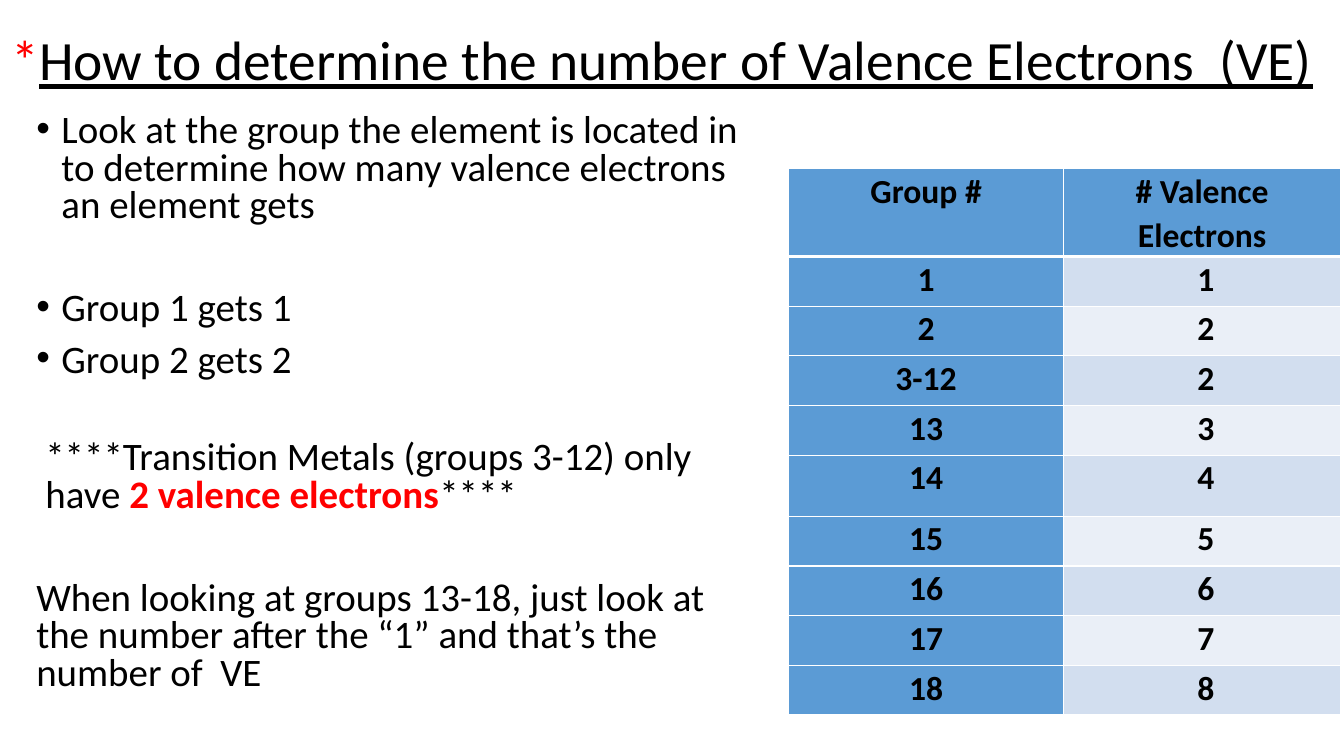
from lxml.etree import SubElement
from pptx import Presentation
from pptx.dml.color import RGBColor
from pptx.enum.text import MSO_ANCHOR as Anchor, MSO_AUTO_SIZE as AutoSize, PP_ALIGN as Align
from pptx.oxml.ns import qn
from pptx.util import Pt

FONT = "Calibri"
COLORS = {"text": "000000", "accent": "FF0000", "blue": "5B9BD5",
          "band_dark": "D2DEEF", "band_light": "EAEFF7", "rule": "FFFFFF"}
TITLE_SIZE, BODY_SIZE, TABLE_SIZE = 39.6, 27.8, 24

# Group label and its number of valence electrons
GROUPS = [("1", 1), ("2", 2), ("3-12", 2), ("13", 3), ("14", 4),
          ("15", 5), ("16", 6), ("17", 7), ("18", 8)]
HEADER_HEIGHT, ROW_HEIGHT, TALL_ROW_HEIGHT = 62, 35.5, 43.6


def rgb(name):
    return RGBColor.from_string(COLORS[name])


def add_run(p, text, size, color="text", bold=False, underline=False):
    r = p.add_run()
    r.text = text
    font = r.font
    font.name, font.size = FONT, Pt(size)
    font.bold, font.underline = bold, underline
    font.color.rgb = rgb(color)


def place(sp, left, top, width, height, anchor):
    sp.left, sp.top, sp.width, sp.height = Pt(left), Pt(top), Pt(width), Pt(height)
    tf = sp.text_frame
    tf.word_wrap = True
    tf.auto_size = AutoSize.NONE
    tf.vertical_anchor = anchor
    return tf


def format_item(p, before, indent=0, bullet=False, level=0):
    p.level = level
    p.alignment = Align.LEFT
    p.line_spacing = 0.8
    p.space_before = Pt(before)
    pPr = p._p.get_or_add_pPr()
    pPr.set("marL", str(Pt(indent)))
    pPr.set("indent", str(Pt(-indent if bullet else 0)))
    if bullet:
        SubElement(pPr, qn("a:buFont"), typeface="Arial")
        SubElement(pPr, qn("a:buChar"), char="•")
    else:
        SubElement(pPr, qn("a:buNone"))


def add_title(s):
    tf = place(s.shapes.title, 1, 0, 960, 90, Anchor.MIDDLE)
    p = tf.paragraphs[0]
    p.alignment = Align.LEFT
    p.line_spacing = 0.9
    add_run(p, "*", TITLE_SIZE, "accent")
    add_run(p, "How to determine the number of Valence Electrons  (VE)",
            TITLE_SIZE, underline=True)


def add_body(s):
    tf = place(s.placeholders[1], 18.7, 77.8, 533.5, 444, Anchor.TOP)
    bullet = {"indent": 18, "bullet": True}
    items = [
        ({"before": 10, **bullet},
         [("Look at the group the element is located in to determine "
           "how many valence electrons an element gets",)]),
        ({"before": 47, **bullet}, [("Group 1 gets 1",)]),
        ({"before": 10, **bullet}, [("Group 2 gets 2",)]),
        ({"before": 43, "indent": 6.5, "level": 1},
         [("****Transition Metals (groups 3-12) only have ",),
          ("2 valence electrons", "accent", True),
          ("****",)]),
        ({"before": 47},
         [("When looking at groups 13-18, just look at the number after "
           "the “1” and that’s the number of  VE",)]),
    ]
    for i, (layout, runs) in enumerate(items):
        p = tf.add_paragraph() if i else tf.paragraphs[0]
        format_item(p, **layout)
        for text, *style in runs:
            add_run(p, text, BODY_SIZE, *style)


def set_borders(cell, top, bottom):
    tcPr = cell._tc.get_or_add_tcPr()
    for side, width in (("L", 1), ("R", 1), ("T", top), ("B", bottom)):
        ln = SubElement(tcPr, qn(f"a:ln{side}"), w=str(Pt(width)))
        fill = SubElement(ln, qn("a:solidFill"))
        SubElement(fill, qn("a:srgbClr"), val=COLORS["rule"])


def fill_cell(cell, text, color, top=1, bottom=1):
    set_borders(cell, top, bottom)
    cell.fill.solid()
    cell.fill.fore_color.rgb = rgb(color)
    cell.margin_left = cell.margin_right = Pt(5)
    cell.margin_top = cell.margin_bottom = 0
    cell.vertical_anchor = Anchor.TOP
    p = cell.text_frame.paragraphs[0]
    p.alignment = Align.CENTER
    p.line_spacing = 1.07
    add_run(p, text, TABLE_SIZE, bold=True)


def add_group_table(s):
    heights = [HEADER_HEIGHT] + [TALL_ROW_HEIGHT if group == "14" else ROW_HEIGHT
                                 for group, _ in GROUPS]
    table = s.shapes.add_table(len(heights), 2, Pt(563.3), Pt(120.5),
                               Pt(394.4), Pt(sum(heights))).table
    for column, width in zip(table.columns, (196.4, 198)):
        column.width = Pt(width)
    for row, height in zip(table.rows, heights):
        row.height = Pt(height)

    # Header row, with a thicker rule below it
    for col, heading in enumerate(("Group #", "# Valence Electrons")):
        fill_cell(table.cell(0, col), heading, "blue", bottom=3)

    # Banded rows
    for i, (group, electrons) in enumerate(GROUPS, start=1):
        top = 3 if i == 1 else 1
        band = "band_dark" if i % 2 else "band_light"
        fill_cell(table.cell(i, 0), group, "blue", top)
        fill_cell(table.cell(i, 1), f" {electrons}", band, top)


def main():
    prs = Presentation()
    prs.slide_width, prs.slide_height = Pt(960), Pt(540)
    s = prs.slides.add_slide(prs.slide_layouts[1])
    add_title(s)
    add_body(s)
    add_group_table(s)
    prs.save("out.pptx")


if __name__ == "__main__":
    main()
